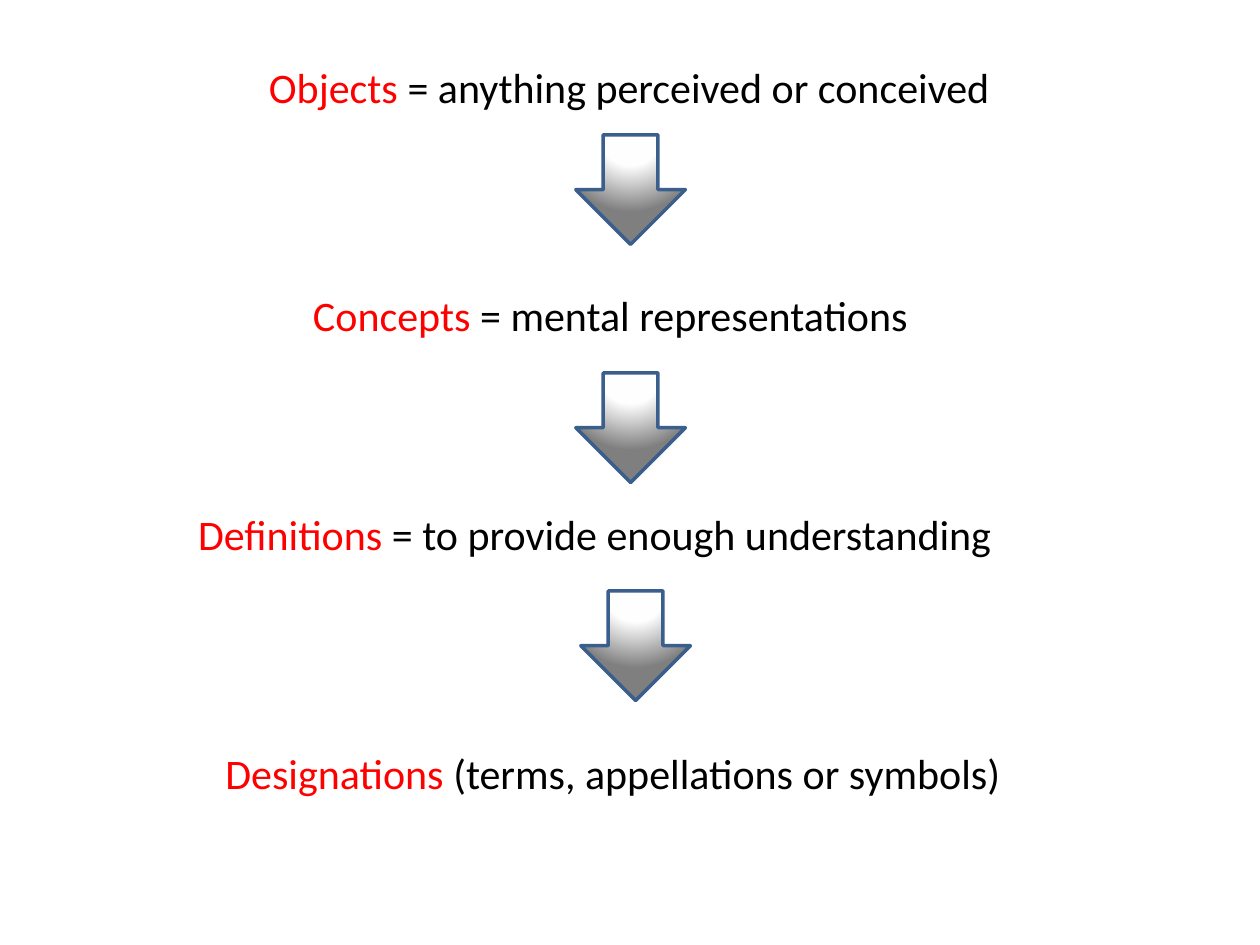
from pptx import Presentation
from pptx.dml.color import RGBColor
from pptx.enum.shapes import MSO_SHAPE
from pptx.enum.text import MSO_AUTO_SIZE, PP_ALIGN
from pptx.oxml import parse_xml
from pptx.oxml.ns import nsdecls
from pptx.util import Inches, Pt

RED = RGBColor(0xFF, 0x00, 0x00)
BLACK = RGBColor(0x00, 0x00, 0x00)
ARROW_LINE = RGBColor(0x3A, 0x5F, 0x8C)
WHITE = RGBColor(0xFF, 0xFF, 0xFF)
NEAR_WHITE = RGBColor(0xFE, 0xFE, 0xFE)
GREY = RGBColor(0x7F, 0x7F, 0x7F)

GRADIENT_STOPS = [(0, WHITE), (40, NEAR_WHITE), (100, GREY)]
ARROW_SIZE = 0.87

# term, explanation, left, top, width, alignment
STATEMENTS = [
    ("Objects", " = anything perceived or conceived", 1.06, 0.44, 7.87, PP_ALIGN.CENTER),
    ("Concepts", " = mental representations", 1.38, 2.25, 6.93, PP_ALIGN.CENTER),
    ("Definitions", " = to provide enough understanding", 1.06, 3.99, 7.32, PP_ALIGN.CENTER),
    ("Designations", " (terms, appellations or symbols)", 1.69, 5.88, 7.09, PP_ALIGN.LEFT),
]
ARROW_POSITIONS = [(4.57, 1.07), (4.57, 2.96), (4.61, 4.69)]


def add_run(paragraph, text, color):
    run = paragraph.add_run()
    run.text = text
    run.font.name = "Calibri"
    run.font.size = Pt(24)
    run.font.color.rgb = color


def add_statement(slide, term, explanation, left, top, width, alignment):
    text_box = slide.shapes.add_textbox(
        Inches(left), Inches(top), Inches(width), Inches(0.5))
    text_frame = text_box.text_frame
    text_frame.word_wrap = True
    text_frame.auto_size = MSO_AUTO_SIZE.SHAPE_TO_FIT_TEXT
    paragraph = text_frame.paragraphs[0]
    paragraph.alignment = alignment
    add_run(paragraph, term, RED)
    add_run(paragraph, explanation, BLACK)


def set_circular_gradient(shape):
    """Fill with a circular gradient centred above the shape."""
    stops = "".join(
        f'<a:gs pos="{percent * 1000}"><a:srgbClr val="{color}"/></a:gs>'
        for percent, color in GRADIENT_STOPS)
    gradient = parse_xml(
        f'<a:gradFill {nsdecls("a")} rotWithShape="1"><a:gsLst>{stops}</a:gsLst>'
        '<a:path path="circle">'
        '<a:fillToRect l="50000" t="-80000" r="50000" b="180000"/>'
        '</a:path></a:gradFill>')
    shape.fill.gradient()
    properties = shape.element.spPr
    properties.replace(properties.find(gradient.tag), gradient)


def add_down_arrow(slide, left, top):
    arrow = slide.shapes.add_shape(
        MSO_SHAPE.DOWN_ARROW, Inches(left), Inches(top),
        Inches(ARROW_SIZE), Inches(ARROW_SIZE))
    arrow.shadow.inherit = False
    set_circular_gradient(arrow)
    arrow.line.color.rgb = ARROW_LINE
    arrow.line.width = Pt(2)


def main():
    presentation = Presentation()
    presentation.slide_width = Inches(10)
    presentation.slide_height = Inches(7.5)
    slide = presentation.slides.add_slide(presentation.slide_layouts[6])
    for statement in STATEMENTS:
        add_statement(slide, *statement)
    for left, top in ARROW_POSITIONS:
        add_down_arrow(slide, left, top)
    presentation.save("out.pptx")


if __name__ == "__main__":
    main()
